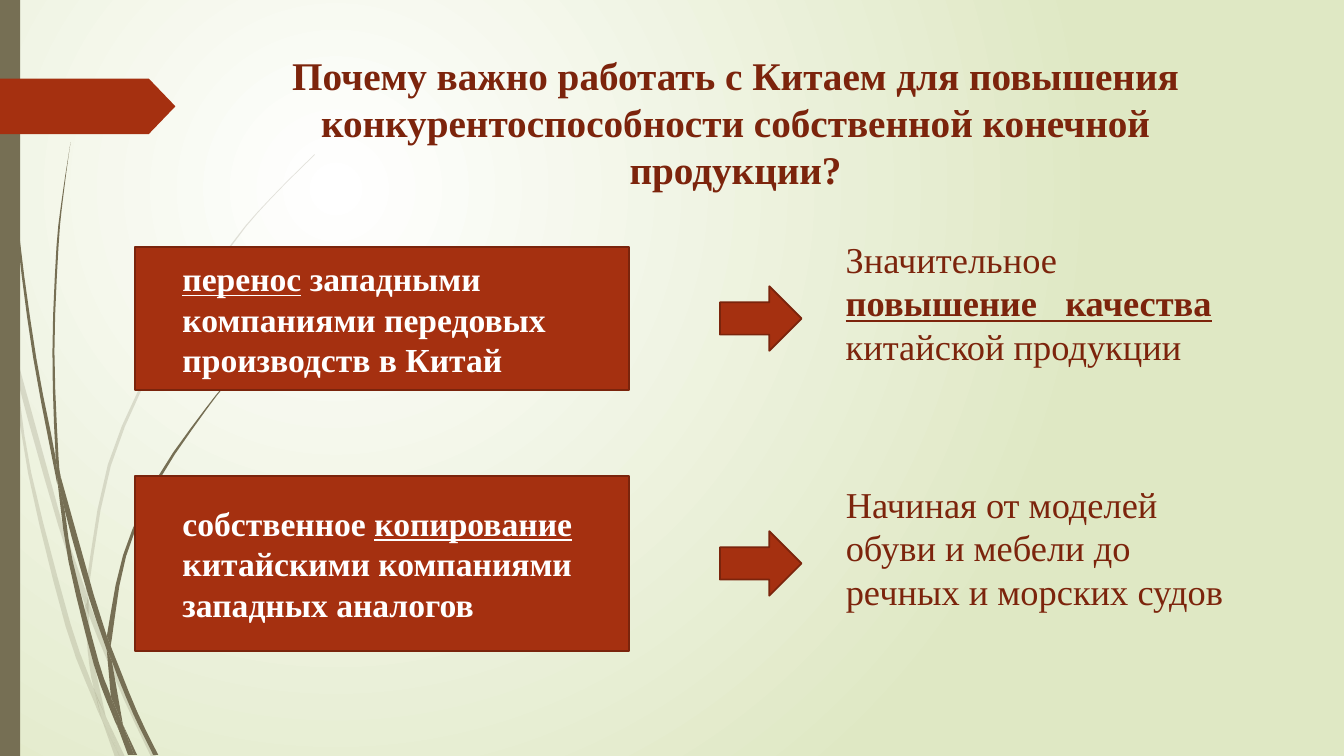
from dataclasses import dataclass

from lxml import etree
from pptx import Presentation
from pptx.dml.color import RGBColor
from pptx.enum.shapes import MSO_SHAPE
from pptx.enum.text import MSO_ANCHOR, MSO_AUTO_SIZE, PP_ALIGN
from pptx.oxml import parse_xml
from pptx.oxml.ns import nsdecls, qn
from pptx.util import Inches, Pt

RECT, ARROW, TAG = MSO_SHAPE.RECTANGLE, MSO_SHAPE.RIGHT_ARROW, MSO_SHAPE.PENTAGON
TOP, MIDDLE = MSO_ANCHOR.TOP, MSO_ANCHOR.MIDDLE
LEFT, CENTER, JUSTIFY = PP_ALIGN.LEFT, PP_ALIGN.CENTER, PP_ALIGN.JUSTIFY

# Content: each text is a list of (words, style); "u" underlined, "b" bold.
TITLE = [("Почему важно работать с Китаем для повышения "
          "конкурентоспособности собственной конечной продукции?", "")]
ROWS = [
    {"cause": [("перенос", "u"),
               (" западными компаниями передовых производств в Китай", "")],
     "cause_top": 2.45, "cause_height": 1.42,
     "effect": [("Значительное ", ""), ("повышение качества ", "bu"),
                ("китайской продукции", "")],
     "effect_top": 2.3, "effect_width": 3.83, "effect_align": JUSTIFY},
    {"cause": [("собственное ", ""), ("копирование", "u"),
               (" китайскими компаниями западных аналогов", "")],
     "cause_top": 4.72, "cause_height": 1.74,
     "effect": [("Начиная от моделей обуви и мебели до речных и морских судов", "")],
     "effect_top": 4.73, "effect_width": 4.11, "effect_align": LEFT},
]

# Grass blades: left and right edge of each, from tip to root, in inches.
PALE_BLADES = [
    ([(0, 2.99), (.1, 3.44), (.11, 3.5)], [(0, 2.82), (.09, 3.22), (.11, 3.5)]),
    ([(.14, 3.45), (.17, 3.76), (.58, 5.22), (.84, 5.99)],
     [(.14, 3.45), (.62, 5.2), (.85, 5.86)]),
    ([(.88, 5.96), (.88, 6.1), (1.23, 6.94), (1.5, 7.51)],
     [(.88, 5.96), (.92, 6.07), (1.27, 6.92), (1.55, 7.51)]),
    ([(1.05, 7.11), (1.19, 7.51)], [(1.05, 7.11), (1.24, 7.51)]),
    ([(.11, 3.5), (.28, 4.7), (.65, 6.21), (.92, 6.93), (1.01, 7.14)],
     [(.11, 3.5), (.17, 3.76), (.31, 4.69), (.7, 6.19), (.93, 6.83), (1.01, 7.14)]),
    ([(.84, 5.99), (.87, 6.46), (.93, 6.83), (1.05, 7.11)],
     [(.84, 5.99), (.88, 6.1), (.91, 6.46), (1.05, 7.11)]),
    ([(3.12, 1.53), (2.68, 1.97), (2.28, 2.44), (1.58, 3.48), (1.07, 4.61), (.85, 5.84)],
     [(3.12, 1.54), (2.68, 1.98), (2.29, 2.45), (1.6, 3.49), (1.1, 4.62), (.88, 5.84),
      (.88, 5.96)]),
    ([(1.01, 7.14), (1.14, 7.51)], [(1.01, 7.14), (1.19, 7.51)]),
    ([(.85, 5.86), (.84, 5.99), (.88, 6.1)], [(.85, 5.86), (.88, 5.96), (.88, 6.1)]),
    ([(.93, 6.83), (1.01, 7.14), (1.19, 7.51)], [(.93, 6.83), (1.05, 7.11), (1.19, 7.51)]),
]
DARK_BLADES = [
    ([(.03, 0), (.07, 1.1), (.17, 2.33), (.33, 3.55), (.57, 4.81)],
     [(.04, 0), (.08, 1.09), (.19, 2.32), (.36, 3.55), (.55, 4.53), (.57, 4.81)]),
    ([(.6, 4.72), (.64, 5.05), (.88, 5.92), (1.06, 6.45)],
     [(.6, 4.72), (.93, 5.9), (1.06, 6.31)]),
    ([(1.1, 6.41), (1.11, 6.56), (1.32, 7.08), (1.52, 7.49)],
     [(1.1, 6.41), (1.13, 6.49), (1.36, 7.06), (1.57, 7.49)]),
    ([(.57, 4.77), (.68, 5.57), (.93, 6.59), (1.11, 7.08), (1.17, 7.22)],
     [(.57, 4.77), (.64, 5.05), (.72, 5.56), (.98, 6.57), (1.1, 6.91), (1.17, 7.22)]),
    ([(.7, 1.41), (.62, 1.93), (.56, 2.45), (.52, 3.49), (.55, 4.49), (.6, 4.72)],
     [(.7, 1.41), (.63, 1.93), (.58, 2.45), (.54, 3.49), (.58, 4.53), (.6, 4.72)]),
    ([(1.22, 7.19), (1.33, 7.49)], [(1.22, 7.19), (1.36, 7.49)]),
    ([(.55, 4.49), (.57, 4.77), (.64, 5.05)], [(.55, 4.49), (.6, 4.72), (.64, 5.05)]),
    ([(2.6, 3.44), (2.31, 3.73), (2.04, 4.05), (1.56, 4.74), (1.22, 5.51), (1.06, 6.31)],
     [(2.61, 3.44), (2.31, 3.74), (2.05, 4.06), (1.58, 4.76), (1.25, 5.52), (1.11, 6.33),
      (1.1, 6.41)]),
    ([(1.17, 7.22), (1.27, 7.49)], [(1.17, 7.22), (1.31, 7.49)]),
    ([(1.06, 6.45), (1.1, 6.91), (1.22, 7.19)], [(1.06, 6.45), (1.11, 6.56), (1.22, 7.19)]),
    ([(1.06, 6.31), (1.06, 6.45), (1.11, 6.56)], [(1.06, 6.31), (1.1, 6.41), (1.11, 6.56)]),
    ([(1.1, 6.91), (1.17, 7.22), (1.3, 7.49)], [(1.1, 6.91), (1.22, 7.19), (1.33, 7.49)]),
]


@dataclass(frozen=True)
class Theme:
    font: str = "Times New Roman"
    accent: str = "A53010"
    outline: str = "7A240C"
    ink: str = "7C240C"
    light: str = "FFFFFF"
    grass: str = "766F54"
    glow_edge: str = "DFE8C4"
    title_size: int = 28
    cause_size: int = 24
    effect_size: int = 26
    line_width: float = 1.25
    pale_alpha: int = 20


THEME = Theme()
WIDTH, HEIGHT = 13.33, 7.5
CAUSE_LEFT, CAUSE_WIDTH, CAUSE_INSET = 1.34, 4.9, 0.47
ARROW_LEFT, ARROW_WIDTH, ARROW_HEIGHT = 7.14, 0.81, 0.64
EFFECT_LEFT, EFFECT_HEIGHT = 8.29, 1.41
UNITS_PER_INCH = 1000


def color(value):
    return RGBColor.from_string(value)


def box(left, top, width, height):
    return [Inches(v) for v in (left, top, width, height)]


def paint(shape, fill, outline=None):
    shape.shadow.inherit = False
    shape.fill.solid()
    shape.fill.fore_color.rgb = color(fill)
    if outline:
        shape.line.color.rgb = color(outline)
        shape.line.width = Pt(THEME.line_width)
    else:
        shape.line.fill.background()
    return shape


def write(shape, pieces, size, ink, align=LEFT, anchor=TOP, bold=False):
    frame = shape.text_frame
    frame.word_wrap = True
    frame.auto_size = MSO_AUTO_SIZE.NONE
    frame.vertical_anchor = anchor
    paragraph = frame.paragraphs[0]
    paragraph.alignment = align
    font = paragraph.font
    font.name, font.size, font.bold = THEME.font, Pt(size), bold
    font.color.rgb = color(ink)
    for words, style in pieces:
        run = paragraph.add_run()
        run.text = words
        if "b" in style:
            run.font.bold = True
        if "u" in style:
            run.font.underline = True
    return paragraph


def smooth(points, steps=3):
    """Catmull-Rom curve through the points, as a dense list of points."""
    if len(points) < 4:
        return points
    padded = [points[0], *points, points[-1]]
    curve = [points[0]]
    for a, b, c, d in zip(padded, padded[1:], padded[2:], padded[3:]):
        for step in range(1, steps + 1):
            t = step / steps
            curve.append(tuple(
                (2 * q + (r - p) * t + (2 * p - 5 * q + 4 * r - s) * t ** 2
                 + (3 * q - p - 3 * r + s) * t ** 3) / 2
                for p, q, r, s in zip(a, b, c, d)))
    return curve


def add_blade(shapes, left_edge, right_edge, alpha=None):
    start, *rest = [(x * UNITS_PER_INCH, y * UNITS_PER_INCH)
                    for x, y in smooth(left_edge) + smooth(right_edge)[::-1]]
    builder = shapes.build_freeform(*start, scale=Inches(1) / UNITS_PER_INCH)
    builder.add_line_segments(rest, close=True)
    blade = paint(builder.convert_to_shape(), THEME.grass)
    if alpha:
        tint = blade._element.spPr.find(qn("a:solidFill"))[0]
        etree.SubElement(tint, qn("a:alpha"), val=str(alpha * 1000))


def add_glow(slide):
    """Round gradient background, brightest at a quarter of width and height."""
    fill = slide.background.fill
    fill.gradient()
    for stop, position, value in zip(fill.gradient_stops, (0, 1),
                                     (THEME.light, THEME.glow_edge)):
        stop.position = position
        stop.color.rgb = color(value)
    linear = next(slide._element.iter(qn("a:lin")))
    linear.getparent().replace(linear, parse_xml(
        f'<a:path {nsdecls("a")} path="circle">'
        '<a:fillToRect l="50000" t="50000" r="100000" b="100000"/></a:path>'))


def add_row(shapes, row):
    cause = shapes.add_shape(
        RECT, *box(CAUSE_LEFT, row["cause_top"], CAUSE_WIDTH, row["cause_height"]))
    paint(cause, THEME.accent, THEME.outline)
    cause.text_frame.margin_left = Inches(CAUSE_INSET)
    paragraph = write(cause, row["cause"], THEME.cause_size, THEME.light,
                      anchor=MIDDLE, bold=True)
    paragraph.space_before = Pt(10)
    middle = row["cause_top"] + row["cause_height"] / 2
    arrow = shapes.add_shape(
        ARROW, *box(ARROW_LEFT, middle - ARROW_HEIGHT / 2, ARROW_WIDTH, ARROW_HEIGHT))
    paint(arrow, THEME.accent, THEME.outline)
    effect = shapes.add_textbox(
        *box(EFFECT_LEFT, row["effect_top"], row["effect_width"], EFFECT_HEIGHT))
    write(effect, row["effect"], THEME.effect_size, THEME.ink, row["effect_align"])


deck = Presentation()
deck.slide_width, deck.slide_height = Inches(WIDTH), Inches(HEIGHT)
slide = deck.slides.add_slide(deck.slide_layouts[5])
add_glow(slide)
for blades, opacity in ((PALE_BLADES, THEME.pale_alpha), (DARK_BLADES, None)):
    for edges in blades:
        add_blade(slide.shapes, *edges, alpha=opacity)
paint(slide.shapes.add_shape(RECT, *box(0, 0, 0.2, HEIGHT)), THEME.grass)
tag = paint(slide.shapes.add_shape(TAG, *box(0, 0.78, 1.74, 0.55)), THEME.accent)
tag.adjustments[0] = 0.48
title = slide.shapes.title
title.left, title.top, title.width, title.height = box(2.01, 0.46, 10.57, 1.62)
write(title, TITLE, THEME.title_size, THEME.ink, CENTER, bold=True)
for row in ROWS:
    add_row(slide.shapes, row)
deck.save("out.pptx")
